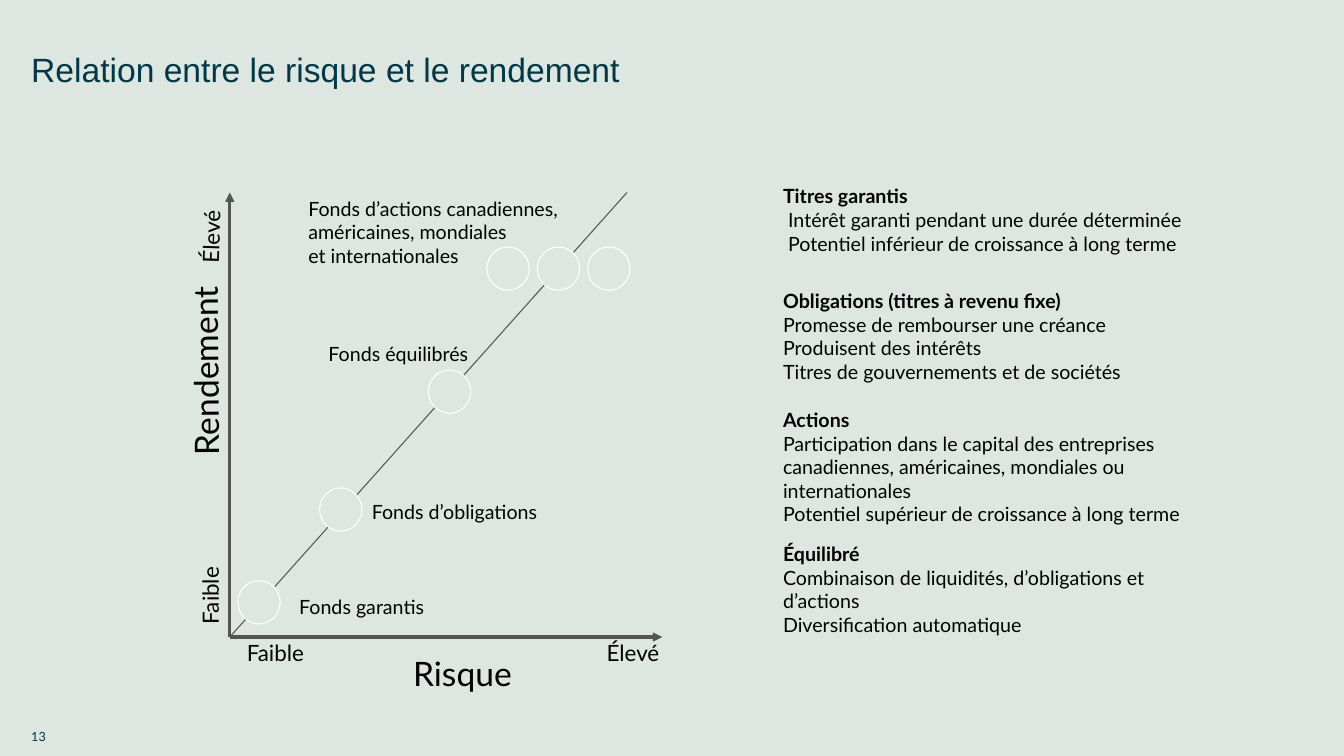
from dataclasses import dataclass

from lxml.etree import SubElement
from pptx import Presentation
from pptx.dml.color import RGBColor
from pptx.enum.shapes import MSO_CONNECTOR, MSO_SHAPE
from pptx.enum.text import MSO_ANCHOR, MSO_AUTO_SIZE
from pptx.oxml.ns import qn
from pptx.util import Inches, Pt


@dataclass(frozen=True)
class Theme:
    background: str = "DDE6E1"
    heading: str = "003846"
    body: str = "000000"
    axis: str = "545454"
    ring: str = "FFFFFF"
    title_font: str = "Arial"
    text_font: str = "Lato"
    large: int = 24
    scale: int = 16
    normal: int = 14
    small: int = 9
    thick: float = 2.25
    thin: float = 0.75


THEME = Theme()
COLUMNS, ROWS = 160, 90

TITLE = "Relation entre le risque et le rendement"
PAGE = "13"

ORIGIN = (27.36, 75.84)
RISK_END, RETURN_END, TREND_END = 78.84, 22.92, 74.64

AXIS_LABELS = [
    ("Rendement", (12.6, 40.56, 23.64, 6), THEME.large, 269.5),
    ("Risque", (48, 77.16, 15, 6.12), THEME.large, 0),
    ("Faible", (28.2, 75.48, 9.72, 4.44), THEME.scale, 0),
    ("Élevé", (71.04, 75.48, 9, 4.44), THEME.scale, 0),
    ("Faible", (20.16, 68.4, 9.72, 4.44), THEME.scale, 270),
    ("Élevé", (20.64, 25.8, 9, 4.44), THEME.scale, 271.8),
]

MARKER_WIDTH, MARKER_HEIGHT, MARKER_STEP = 5.04, 5.16, 6
FUNDS = [
    (["Fonds garantis"], (34.44, 70.2, 18.24, 4.08), (28.32, 69.12), 1),
    (["Fonds d’obligations"], (43.08, 58.92, 23.16, 4.08), (38.04, 58.08), 1),
    (["Fonds équilibrés"], (37.92, 40.08, 19.92, 4.08), (51, 44.04), 1),
    (["Fonds d’actions canadiennes,", "américaines, mondiales", "et internationales"],
     (35.52, 22.8, 33.48, 9.72), (57.96, 29.4), 3),
]

NOTES_LEFT = 92.04
INVESTMENTS = [
    ("Titres garantis", 21.36, 52.08, 9.72, 0.6,
     ["Intérêt garanti pendant une durée déterminée",
      "Potentiel inférieur de croissance à long terme"]),
    ("Obligations (titres à revenu fixe)", 33.84, 52.08, 12.48, 0,
     ["Promesse de rembourser une créance",
      "Produisent des intérêts",
      "Titres de gouvernements et de sociétés"]),
    ("Actions", 48, 52.56, 15.36, 0,
     ["Participation dans le capital des entreprises canadiennes, "
      "américaines, mondiales ou internationales",
      "Potentiel supérieur de croissance à long terme"]),
    ("Équilibré", 63.96, 52.56, 12.48, 0,
     ["Combinaison de liquidités, d’obligations et d’actions",
      "Diversification automatique"]),
]

deck = Presentation()
deck.slide_width, deck.slide_height = Inches(13.33), Inches(7.5)
slide = deck.slides.add_slide(deck.slide_layouts[6])
slide.background.fill.solid()
slide.background.fill.fore_color.rgb = RGBColor.from_string(THEME.background)


def place(*cells):
    units = (deck.slide_width / COLUMNS, deck.slide_height / ROWS)
    return [round(cell * units[i % 2]) for i, cell in enumerate(cells)]


def apply(target, values):
    for key, value in values.items():
        setattr(target, key, value)


def write(lines, box, size=THEME.normal, color=THEME.body, font=THEME.text_font,
          wrap=False, heading=False, indent=0, rotation=0, frame_format=None):
    label = slide.shapes.add_textbox(*place(*box))
    label.rotation = rotation
    frame = label.text_frame
    apply(frame, {"word_wrap": wrap, "auto_size": MSO_AUTO_SIZE.SHAPE_TO_FIT_TEXT,
                  **(frame_format or {})})
    for i, line in enumerate(lines):
        paragraph = frame.add_paragraph() if i else frame.paragraphs[0]
        if indent and i:
            paragraph._p.get_or_add_pPr().set("marL", str(place(indent)[0]))
        run = paragraph.add_run()
        run.text = line
        apply(run.font, {"size": Pt(size), "name": font, "bold": heading and i == 0})
        run.font.color.rgb = RGBColor.from_string(color)


def draw_line(end, width, arrow):
    line = slide.shapes.add_connector(MSO_CONNECTOR.STRAIGHT, *place(*ORIGIN, *end))
    line.line.color.rgb = RGBColor.from_string(THEME.axis)
    line.line.width = Pt(width)
    if arrow:
        SubElement(line.line._get_or_add_ln(), qn("a:tailEnd"), type="triangle")
    SubElement(line._element.spPr, qn("a:effectLst"))


def draw_marker(left, top):
    marker = slide.shapes.add_shape(
        MSO_SHAPE.OVAL, *place(left, top, MARKER_WIDTH, MARKER_HEIGHT))
    marker.shadow.inherit = False
    marker.fill.solid()
    marker.fill.fore_color.rgb = RGBColor.from_string(THEME.background)
    marker.line.color.rgb = RGBColor.from_string(THEME.ring)
    marker.line.width = Pt(THEME.thin)


FLUSH = {"margin_left": 0, "margin_right": 0, "margin_top": 0, "margin_bottom": 0,
         "auto_size": MSO_AUTO_SIZE.NONE}
write([PAGE], (3.72, 86.76, 4.2, 1.92), THEME.small, THEME.heading, wrap=True,
      frame_format={**FLUSH, "vertical_anchor": MSO_ANCHOR.MIDDLE})
write([TITLE], (3.72, 3.72, 152.4, 9.6), THEME.large, THEME.heading, THEME.title_font,
      wrap=True, frame_format={**FLUSH, "margin_top": Inches(0.18)})

draw_line((ORIGIN[0], RETURN_END), THEME.thick, True)
draw_line((RISK_END, ORIGIN[1]), THEME.thick, True)
draw_line((TREND_END, RETURN_END), THEME.thin, False)

for text, box, size, rotation in AXIS_LABELS:
    write([text], box, size, rotation=rotation)

for lines, box, (left, top), count in FUNDS:
    for i in range(count):
        draw_marker(left + i * MARKER_STEP, top)
    write(lines, box)

for name, top, width, height, indent, details in INVESTMENTS:
    write([name, *details], (NOTES_LEFT, top, width, height),
          wrap=True, heading=True, indent=indent)

deck.save("out.pptx")
